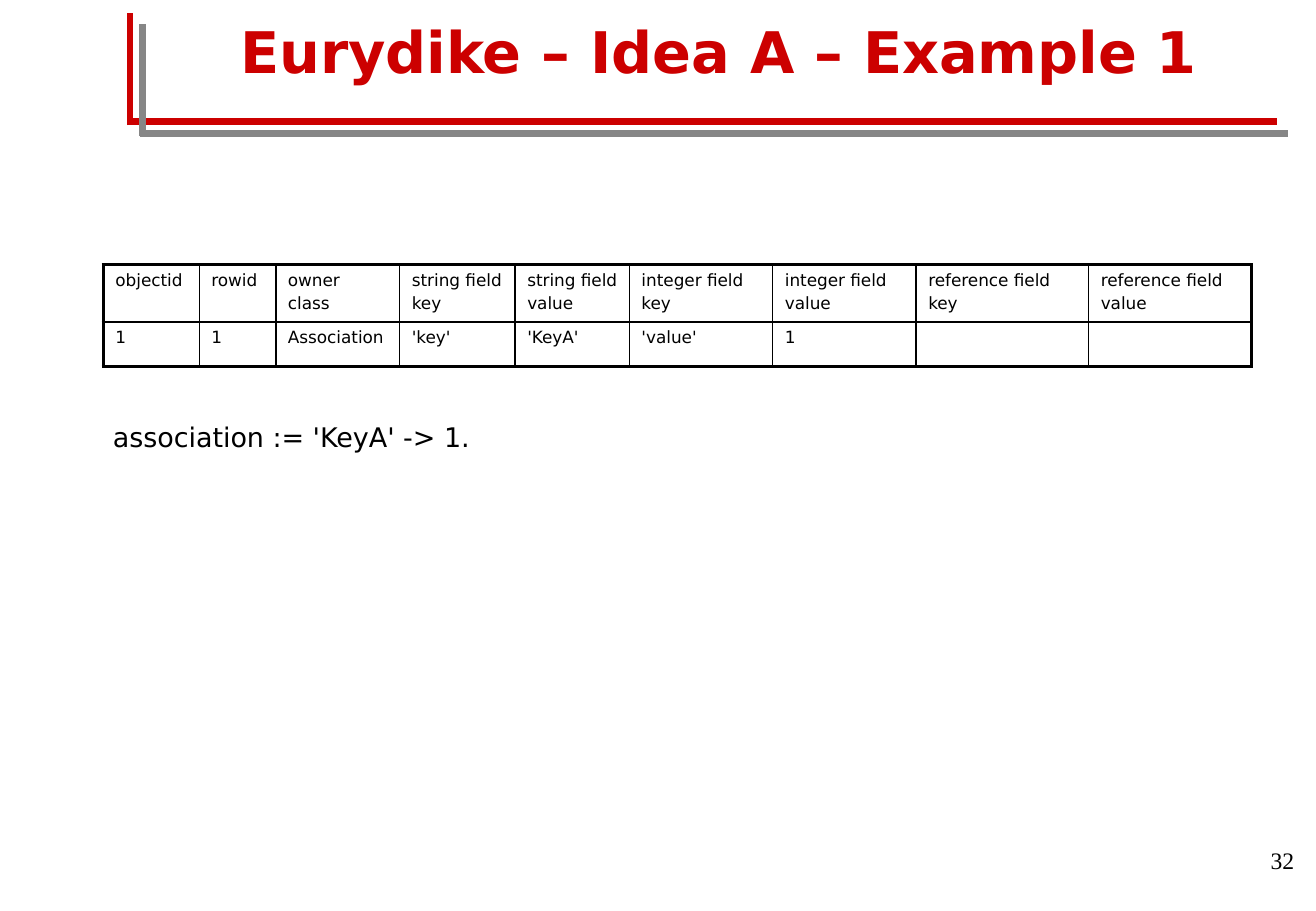
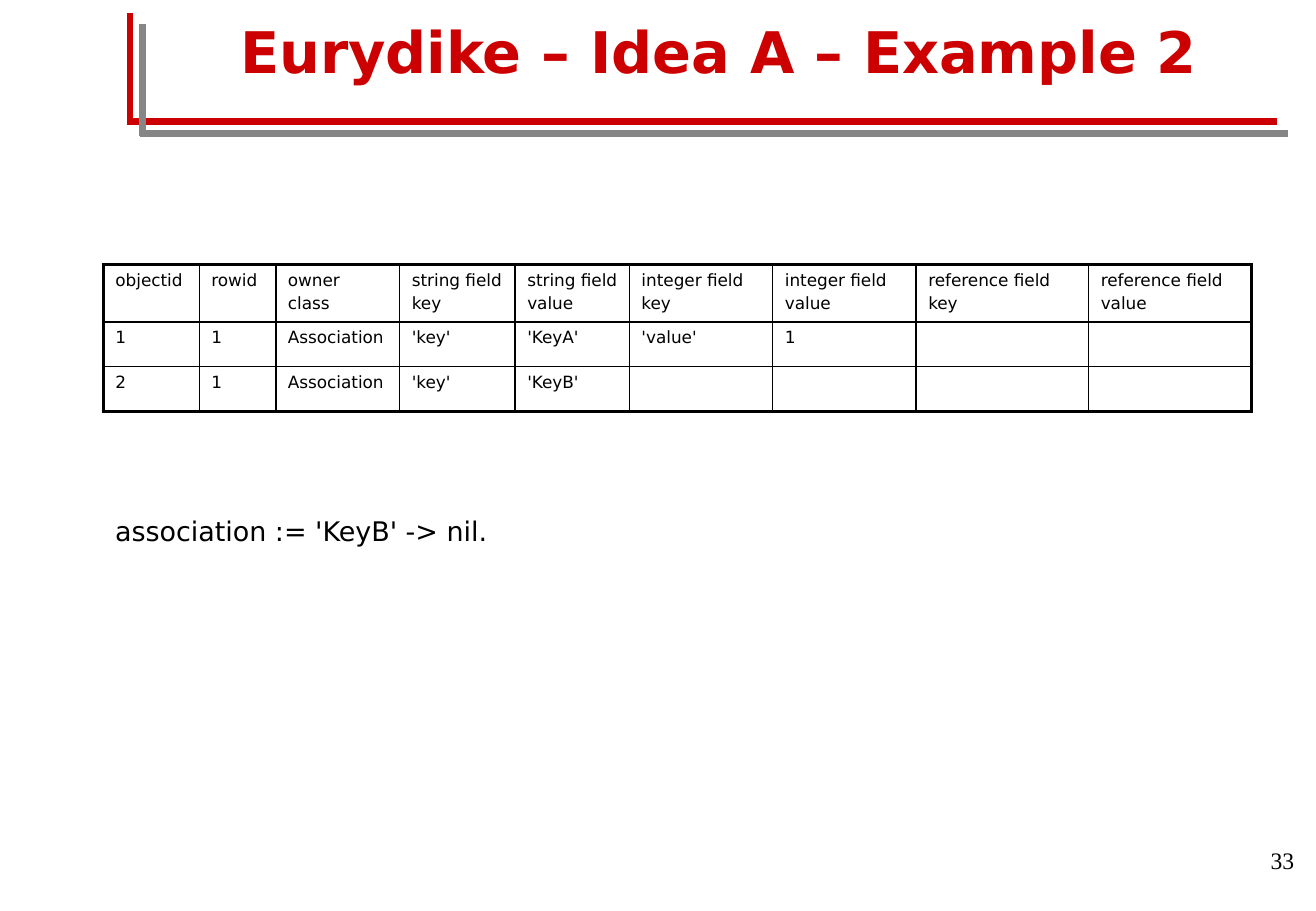
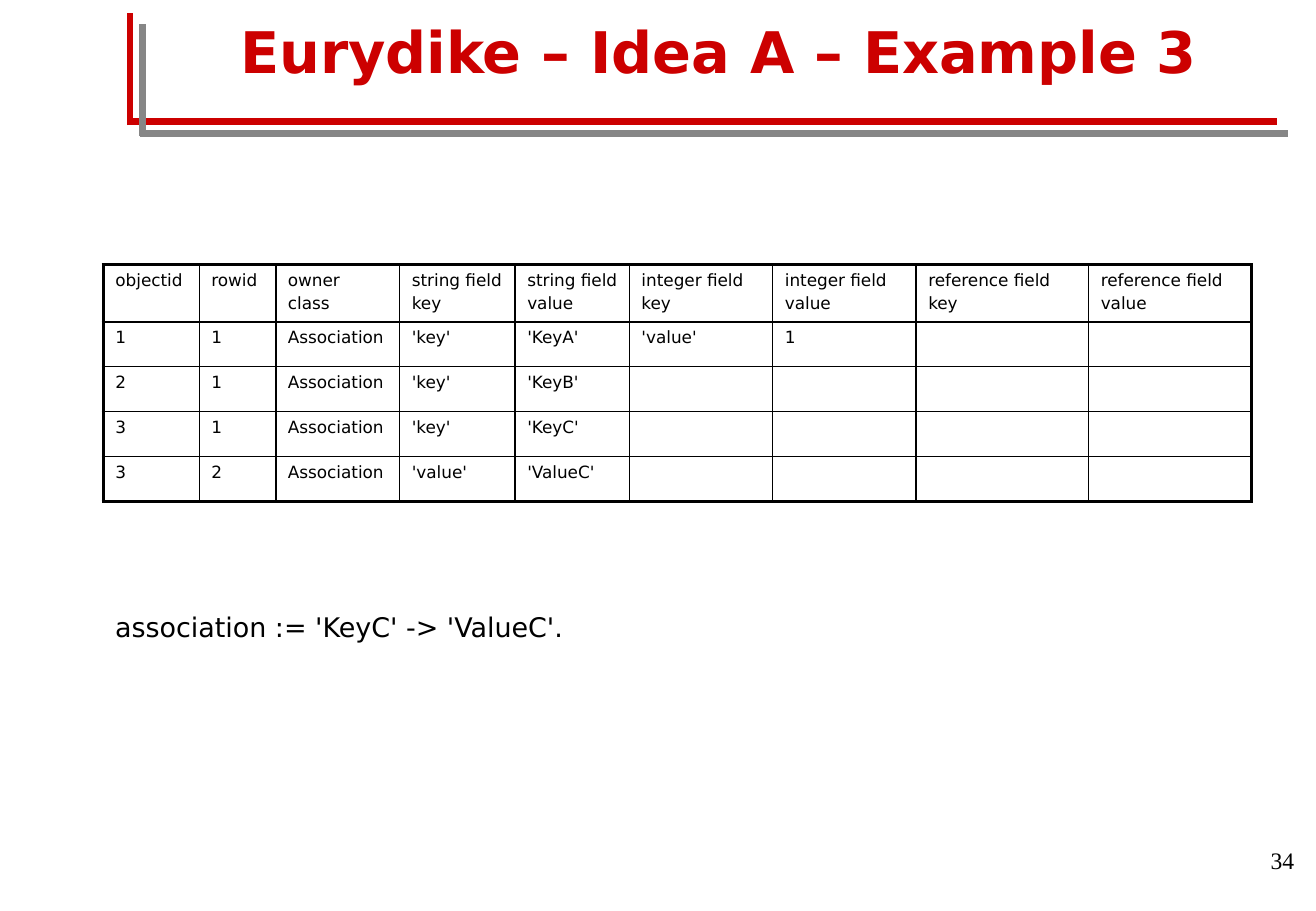
"""Build three slides showing how associations are stored as table rows."""
from dataclasses import dataclass

from lxml.etree import SubElement
from pptx import Presentation
from pptx.dml.color import RGBColor
from pptx.enum.shapes import MSO_CONNECTOR
from pptx.enum.text import MSO_ANCHOR, PP_ALIGN
from pptx.oxml.ns import qn
from pptx.slide import Slide
from pptx.table import _Cell
from pptx.text.text import TextFrame
from pptx.util import Inches, Pt


@dataclass(frozen=True)
class Theme:
    red: str = "CC0000"
    gray: str = "868686"
    black: str = "000000"
    font: str = "DejaVu Sans"
    number_font: str = "Times New Roman"
    title_size: float = 34
    body_size: float = 16
    number_size: float = 14
    cell_size: float = 10
    rule_width: float = 4
    thin: float = 1
    thick: float = 2.25


@dataclass(frozen=True)
class Rule:
    x1: float
    y1: float
    x2: float
    y2: float
    color: str


@dataclass(frozen=True)
class Box:
    left: float
    top: float
    width: float
    height: float


@dataclass(frozen=True)
class Example:
    statement: str
    left: float
    top: float
    row_count: int


THEME = Theme()
RULES = (
    Rule(1.06, 1, 10.51, 1, THEME.red),
    Rule(1.07, 1.03, 1.07, 0.11, THEME.red),
    Rule(1.15, 1.1, 10.6, 1.1, THEME.gray),
    Rule(1.17, 1.12, 1.17, 0.2, THEME.gray),
)
TITLE_BOX = Box(1, 0, 9.83, 0.83)
NUMBER_BOX = Box(8.49, 6.83, 2.26, 0.5)
FIRST_NUMBER = 32
TABLE_LEFT, TABLE_TOP = 0.85, 2.18
COLUMN_WIDTHS = (0.79, 0.63, 1.02, 0.95, 0.94, 1.18, 1.18, 1.42, 1.34)
HEADER_HEIGHT, ROW_HEIGHT = 0.47, 0.37
HEADER = (
    "objectid", "rowid", "owner\nclass",
    *(f"{kind} field\n{part}" for kind in ("string", "integer", "reference")
      for part in ("key", "value")),
)
RECORDS = (
    ("1", "1", "Association", "'key'", "'KeyA'", "'value'", "1", "", ""),
    ("2", "1", "Association", "'key'", "'KeyB'", "", "", "", ""),
    ("3", "1", "Association", "'key'", "'KeyC'", "", "", "", ""),
    ("3", "2", "Association", "'value'", "'ValueC'", "", "", "", ""),
)
EXAMPLES = (
    Example("association := 'KeyA' -> 1.", 0.83, 3.44, 1),
    Example("association := 'KeyB' -> nil.", 0.85, 4.22, 2),
    Example("association := 'KeyC' -> 'ValueC'.", 0.85, 5.01, 4),
)


def write_text(tf: TextFrame, text: str, *, size: float, font: str = THEME.font,
               color: str = THEME.black, bold: bool = False,
               align: PP_ALIGN = PP_ALIGN.LEFT, anchor: MSO_ANCHOR = MSO_ANCHOR.TOP,
               spacing: float = 1.0) -> None:
    tf.word_wrap = True
    tf.vertical_anchor = anchor
    for i, line in enumerate(text.split("\n")):
        p = tf.add_paragraph() if i else tf.paragraphs[0]
        p.alignment = align
        p.line_spacing = spacing
        p.space_before = Pt(size * 0.2 if i else 0)
        if not line:
            SubElement(p._p, qn("a:endParaRPr"), sz=str(int(size * 100)))
            continue
        r = p.add_run()
        r.text = line
        r.font.name = font
        r.font.size = Pt(size)
        r.font.bold = bold
        r.font.color.rgb = RGBColor.from_string(color)


def add_text(s: Slide, box: Box, text: str, **style) -> None:
    sp = s.shapes.add_textbox(Inches(box.left), Inches(box.top),
                              Inches(box.width), Inches(box.height))
    write_text(sp.text_frame, text, **style)


def add_rule(s: Slide, rule: Rule) -> None:
    cxn = s.shapes.add_connector(MSO_CONNECTOR.STRAIGHT, Inches(rule.x1), Inches(rule.y1),
                                 Inches(rule.x2), Inches(rule.y2))
    cxn.line.color.rgb = RGBColor.from_string(rule.color)
    cxn.line.width = Pt(THEME.rule_width)
    SubElement(cxn._element.spPr, qn("a:effectLst"))


def set_borders(cell: _Cell, outer: dict[str, bool]) -> None:
    tc_pr = cell._tc.get_or_add_tcPr()
    for side, is_outer in outer.items():
        width = Pt(THEME.thick if is_outer else THEME.thin)
        ln = SubElement(tc_pr, qn(f"a:ln{side}"), w=str(int(width)))
        fill = SubElement(ln, qn("a:solidFill"))
        SubElement(fill, qn("a:srgbClr"), val=THEME.black)


def add_records(s: Slide, records: tuple[tuple[str, ...], ...]) -> None:
    rows = (HEADER, *records)
    heights = (HEADER_HEIGHT, *(ROW_HEIGHT for _ in records))
    tbl = s.shapes.add_table(len(rows), len(HEADER), Inches(TABLE_LEFT), Inches(TABLE_TOP),
                             Inches(sum(COLUMN_WIDTHS)), Inches(sum(heights))).table
    tbl.first_row = tbl.horz_banding = False
    for column, width in zip(tbl.columns, COLUMN_WIDTHS):
        column.width = Inches(width)
    for i, (values, height) in enumerate(zip(rows, heights)):
        tbl.rows[i].height = Inches(height)
        for j, value in enumerate(values):
            cell = tbl.cell(i, j)
            set_borders(cell, {"L": j == 0, "R": j == len(HEADER) - 1,
                               "T": i == 0, "B": i == len(rows) - 1})
            cell.fill.background()
            write_text(cell.text_frame, value, size=THEME.cell_size)


def add_example(prs: Presentation, index: int, example: Example) -> None:
    s = prs.slides.add_slide(prs.slide_layouts[6])
    for rule in RULES:
        add_rule(s, rule)
    add_text(s, TITLE_BOX, f"Eurydike – Idea A – Example {index + 1}",
             size=THEME.title_size, color=THEME.red, bold=True,
             align=PP_ALIGN.CENTER, anchor=MSO_ANCHOR.MIDDLE)
    add_text(s, Box(example.left, example.top, 9.91, 0.71), example.statement,
             size=THEME.body_size, spacing=0.9)
    add_text(s, NUMBER_BOX, str(FIRST_NUMBER + index), size=THEME.number_size,
             font=THEME.number_font, align=PP_ALIGN.RIGHT, anchor=MSO_ANCHOR.MIDDLE)
    add_records(s, RECORDS[:example.row_count])


def main() -> None:
    prs = Presentation()
    prs.slide_width, prs.slide_height = Inches(10.83), Inches(7.5)
    for index, example in enumerate(EXAMPLES):
        add_example(prs, index, example)
    prs.save("out.pptx")


if __name__ == "__main__":
    main()
